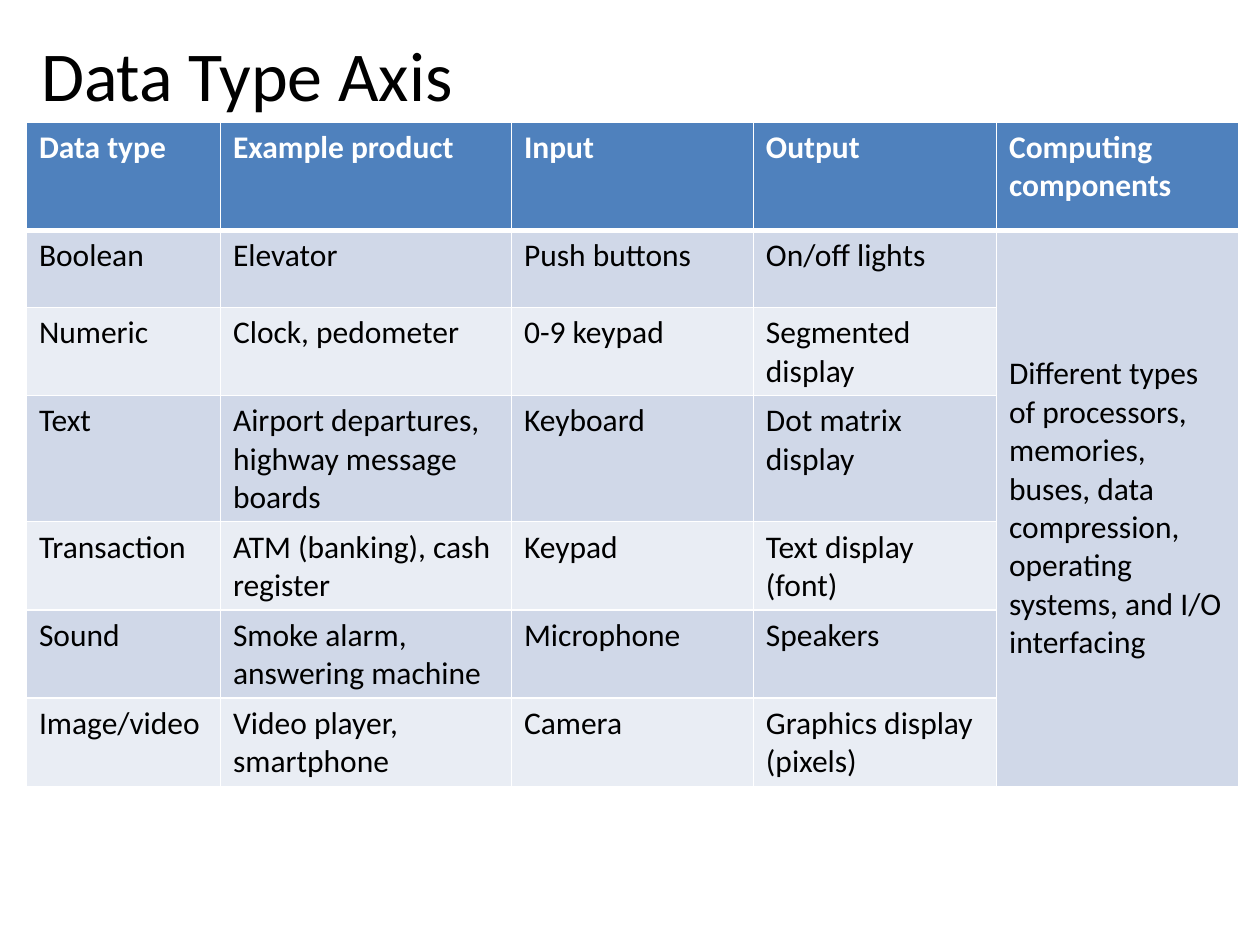
from dataclasses import dataclass

from lxml import etree
from pptx import Presentation
from pptx.dml.color import RGBColor
from pptx.enum import text
from pptx.oxml.ns import qn
from pptx.util import Inches, Pt


@dataclass(frozen=True)
class Theme:
    font: str = "Calibri"
    title_size: int = 40
    table_size: int = 18
    ink: str = "000000"
    header_ink: str = "FFFFFF"
    header_fill: str = "4F81BD"
    bands: tuple = ("D0D8E8", "E9EDF4")
    border: str = "FFFFFF"
    border_width: int = 1
    header_rule: int = 3


THEME = Theme()

HEADINGS = ["Data type", "Example product", "Input", "Output", "Computing components"]
DATA_TYPES = [
    ["Boolean", "Elevator", "Push buttons", "On/off lights"],
    ["Numeric", "Clock, pedometer", "0-9 keypad", "Segmented display"],
    ["Text", "Airport departures, highway message boards", "Keyboard", "Dot matrix display"],
    ["Transaction", "ATM (banking), cash register", "Keypad", "Text display (font)"],
    ["Sound", "Smoke alarm, answering machine", "Microphone", "Speakers"],
    ["Image/video", "Video player, smartphone", "Camera", "Graphics display (pixels)"],
]
COMPONENTS = ("Different types of processors, memories, buses, data compression, "
              "operating systems, and I/O interfacing")

LEFT, TABLE_TOP = 0.21, 0.97
COLUMN_WIDTHS = [1.54, 2.31, 1.92, 1.93, 1.92]
HEADER_HEIGHT, ROW_HEIGHT = 0.86, 0.61


def write(frame, words, size, color, bold=False):
    frame.text = words
    for paragraph in frame.paragraphs:
        for run in paragraph.runs:
            run.font.name = THEME.font
            run.font.size = Pt(size)
            run.font.bold = bold
            run.font.color.rgb = RGBColor.from_string(color)


def set_borders(cell, bottom_width, top_width):
    properties = cell._tc.get_or_add_tcPr()
    widths = {"lnL": THEME.border_width, "lnR": THEME.border_width,
              "lnT": top_width, "lnB": bottom_width}
    # Borders come before the fill in the cell properties
    for position, (side, width) in enumerate(widths.items()):
        line = etree.Element(qn(f"a:{side}"), w=str(Pt(width)))
        fill = etree.SubElement(line, qn("a:solidFill"))
        etree.SubElement(fill, qn("a:srgbClr"), val=THEME.border)
        properties.insert(position, line)


def style_cell(cell, row):
    is_header = row == 0
    color = THEME.header_fill if is_header else THEME.bands[(row - 1) % 2]
    cell.fill.solid()
    cell.fill.fore_color.rgb = RGBColor.from_string(color)
    set_borders(cell,
                bottom_width=THEME.header_rule if is_header else THEME.border_width,
                top_width=THEME.header_rule if row == 1 else THEME.border_width)


def add_title(slide, words):
    title = slide.shapes.add_textbox(Inches(LEFT), Inches(0.2), Inches(3.5), Inches(0.77))
    frame = title.text_frame
    write(frame, words, THEME.title_size, THEME.ink)
    frame.word_wrap = False
    frame.auto_size = text.MSO_AUTO_SIZE.SHAPE_TO_FIT_TEXT
    frame.paragraphs[0].alignment = text.PP_ALIGN.CENTER


def add_data_type_table(slide):
    rows = [HEADINGS] + DATA_TYPES
    heights = [HEADER_HEIGHT] + [ROW_HEIGHT] * len(DATA_TYPES)
    table = slide.shapes.add_table(
        len(rows), len(HEADINGS), Inches(LEFT), Inches(TABLE_TOP),
        Inches(sum(COLUMN_WIDTHS)), Inches(sum(heights))).table
    for column, width in zip(table.columns, COLUMN_WIDTHS):
        column.width = Inches(width)
    for table_row, height in zip(table.rows, heights):
        table_row.height = Inches(height)

    # Header and banded rows
    for r, entries in enumerate(rows):
        for c in range(len(HEADINGS)):
            style_cell(table.cell(r, c), r)
        for c, words in enumerate(entries):
            write(table.cell(r, c).text_frame, words, THEME.table_size,
                  THEME.ink if r else THEME.header_ink, bold=r == 0)

    # Components shared by every data type
    last = len(HEADINGS) - 1
    components = table.cell(1, last)
    components.merge(table.cell(len(DATA_TYPES), last))
    write(components.text_frame, COMPONENTS, THEME.table_size, THEME.ink)
    components.vertical_anchor = text.MSO_ANCHOR.MIDDLE


def main():
    deck = Presentation()
    deck.slide_width, deck.slide_height = Inches(10), Inches(7.5)
    slide = deck.slides.add_slide(deck.slide_layouts[6])
    add_title(slide, "Data Type Axis")
    add_data_type_table(slide)
    deck.save("out.pptx")


if __name__ == "__main__":
    main()
